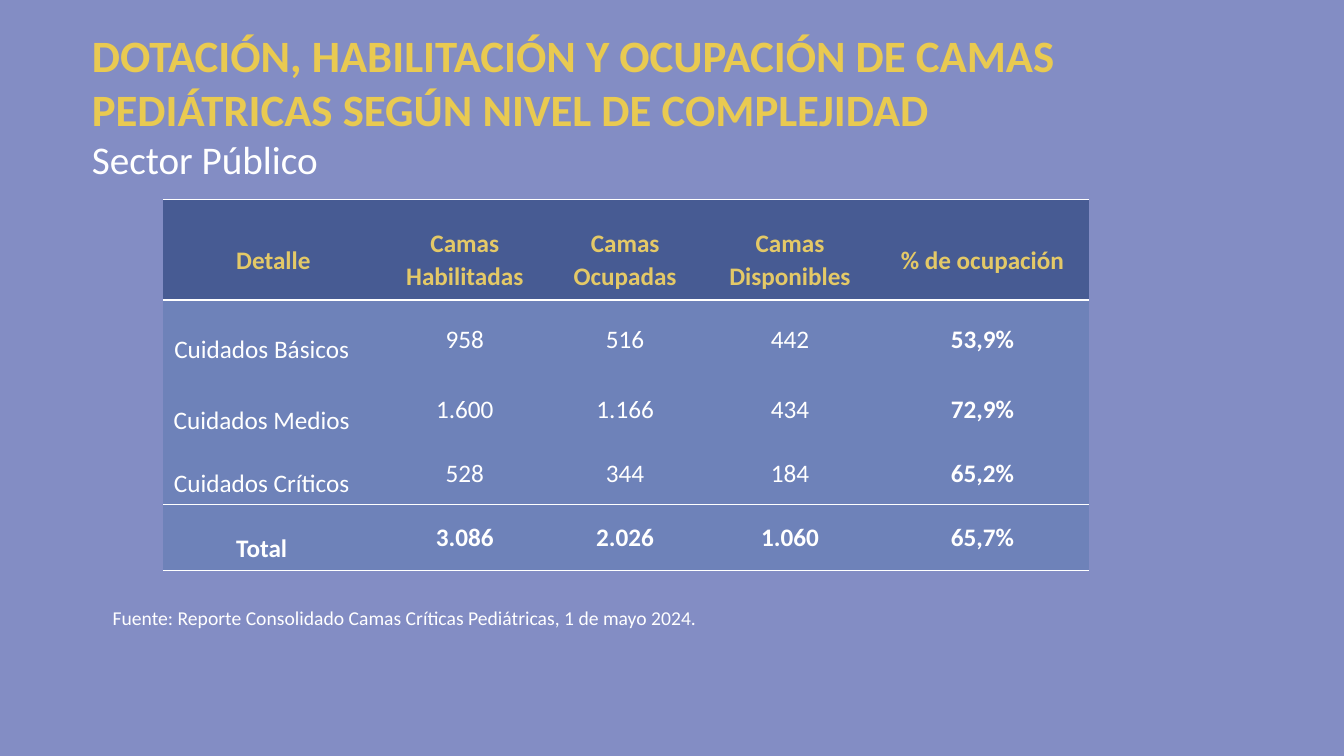
import pptx
import pptx.util
import pptx.dml.color
import pptx.enum.text
import pptx.oxml.ns
from lxml import etree

Cm = pptx.util.Cm
Pt = pptx.util.Pt
RGBColor = pptx.dml.color.RGBColor
ALIGN = pptx.enum.text.PP_ALIGN
MIDDLE = pptx.enum.text.MSO_ANCHOR.MIDDLE
AUTO_SIZE = pptx.enum.text.MSO_AUTO_SIZE

# Content
TITLE = "DOTACIÓN, HABILITACIÓN Y OCUPACIÓN DE CAMAS PEDIÁTRICAS SEGÚN NIVEL DE COMPLEJIDAD"
SUBTITLE = "Sector Público"
BEDS = [
    ("Detalle", "Camas Habilitadas", "Camas Ocupadas", "Camas Disponibles", "% de ocupación"),
    ("Cuidados Básicos", "958", "516", "442", "53,9%"),
    ("Cuidados Medios", "1.600", "1.166", "434", "72,9%"),
    ("Cuidados Críticos", "528", "344", "184", "65,2%"),
    ("Total", "3.086", "2.026", "1.060", "65,7%"),
]
SOURCE = "Fuente: Reporte Consolidado Camas Críticas Pediátricas, 1 de mayo 2024."

# Look
FONT = "Calibri"
LAVENDER = RGBColor(0x83, 0x8D, 0xC4)
GOLD = RGBColor(0xE9, 0xCA, 0x51)
HEADER_GOLD = RGBColor(0xE4, 0xC9, 0x67)
HEADER_BLUE = RGBColor(0x47, 0x5B, 0x93)
ROW_BLUE = RGBColor(0x6E, 0x82, 0xB9)
WHITE = RGBColor(0xFF, 0xFF, 0xFF)
COLUMN_WIDTHS = (5.56, 4.09, 3.99, 4.32, 5.38)
ROW_HEIGHTS = (2.54, 1.96, 1.6, 1.6, 1.65)
TOTAL_ROW = len(BEDS) - 1
RULED_EDGES = (0, 1, TOTAL_ROW, TOTAL_ROW + 1)


def style(para, size, color, bold=False):
    for span in para.runs:
        span.font.name = FONT
        span.font.size = Pt(size)
        span.font.bold = bold
        span.font.color.rgb = color


def set_margins(cell, left, top, right):
    cell.margin_left, cell.margin_top = Cm(left), Cm(top)
    cell.margin_right, cell.margin_bottom = Cm(right), 0


def set_borders(cell, row):
    """Rule the top and bottom edges that need it and clear the others."""
    ruled = {"a:lnT": row in RULED_EDGES, "a:lnB": row + 1 in RULED_EDGES}
    properties = cell._tc.get_or_add_tcPr()
    for place, side in enumerate(("a:lnL", "a:lnR", "a:lnT", "a:lnB")):
        line = etree.Element(pptx.oxml.ns.qn(side), w=str(Pt(1)))
        if ruled.get(side):
            fill = etree.SubElement(line, pptx.oxml.ns.qn("a:solidFill"))
            etree.SubElement(fill, pptx.oxml.ns.qn("a:srgbClr"), val=str(WHITE))
        else:
            etree.SubElement(line, pptx.oxml.ns.qn("a:noFill"))
        properties.insert(place, line)


def fill_cell(cell, text, row, column):
    header, label = row == 0, column == 0
    cell.text_frame.text = text
    cell.vertical_anchor = MIDDLE
    if header:
        set_margins(cell, 0.05, 0.51, 0.05)
    elif label:
        set_margins(cell, 0.05, 0.51, 0.64)
    else:
        set_margins(cell, 0.03, 0.03, 0.03)
    para = cell.text_frame.paragraphs[0]
    para.alignment = ALIGN.CENTER
    if header or label:
        para.line_spacing = 1.07
    bold = header or row == TOTAL_ROW or column == len(COLUMN_WIDTHS) - 1
    style(para, 18, HEADER_GOLD if header else WHITE, bold)
    cell.fill.solid()
    cell.fill.fore_color.rgb = HEADER_BLUE if header else ROW_BLUE
    set_borders(cell, row)


deck = pptx.Presentation()
deck.slide_width, deck.slide_height = Cm(33.87), Cm(19.05)
page = deck.slides.add_slide(deck.slide_layouts[5])
page.background.fill.solid()
page.background.fill.fore_color.rgb = LAVENDER

# Title and subtitle
title = page.shapes.title
title.left, title.top, title.width, title.height = Cm(2.06), Cm(1.04), Cm(25.7), Cm(3.2)
frame = title.text_frame
frame.text = TITLE + "\n" + SUBTITLE
frame.word_wrap = True
frame.auto_size = AUTO_SIZE.NONE
frame.vertical_anchor = MIDDLE
for para in frame.paragraphs:
    para.alignment = ALIGN.LEFT
    para.space_before = Pt(0)
style(frame.paragraphs[0], 32, GOLD, True)
style(frame.paragraphs[1], 28, WHITE)

# Table of beds
table = page.shapes.add_table(
    len(BEDS), len(COLUMN_WIDTHS), Cm(4.11), Cm(5.02),
    Cm(sum(COLUMN_WIDTHS)), Cm(sum(ROW_HEIGHTS))).table
for column, width in zip(table.columns, COLUMN_WIDTHS):
    column.width = Cm(width)
for row, height in zip(table.rows, ROW_HEIGHTS):
    row.height = Cm(height)
for row, texts in enumerate(BEDS):
    for column, text in enumerate(texts):
        fill_cell(table.cell(row, column), text, row, column)

# Source line
source = page.shapes.add_textbox(Cm(2.59), Cm(15.14), Cm(26.34), Cm(0.86))
source.text_frame.text = SOURCE
source.text_frame.word_wrap = True
source.text_frame.auto_size = AUTO_SIZE.SHAPE_TO_FIT_TEXT
style(source.text_frame.paragraphs[0], 14, WHITE)

deck.save("out.pptx")
